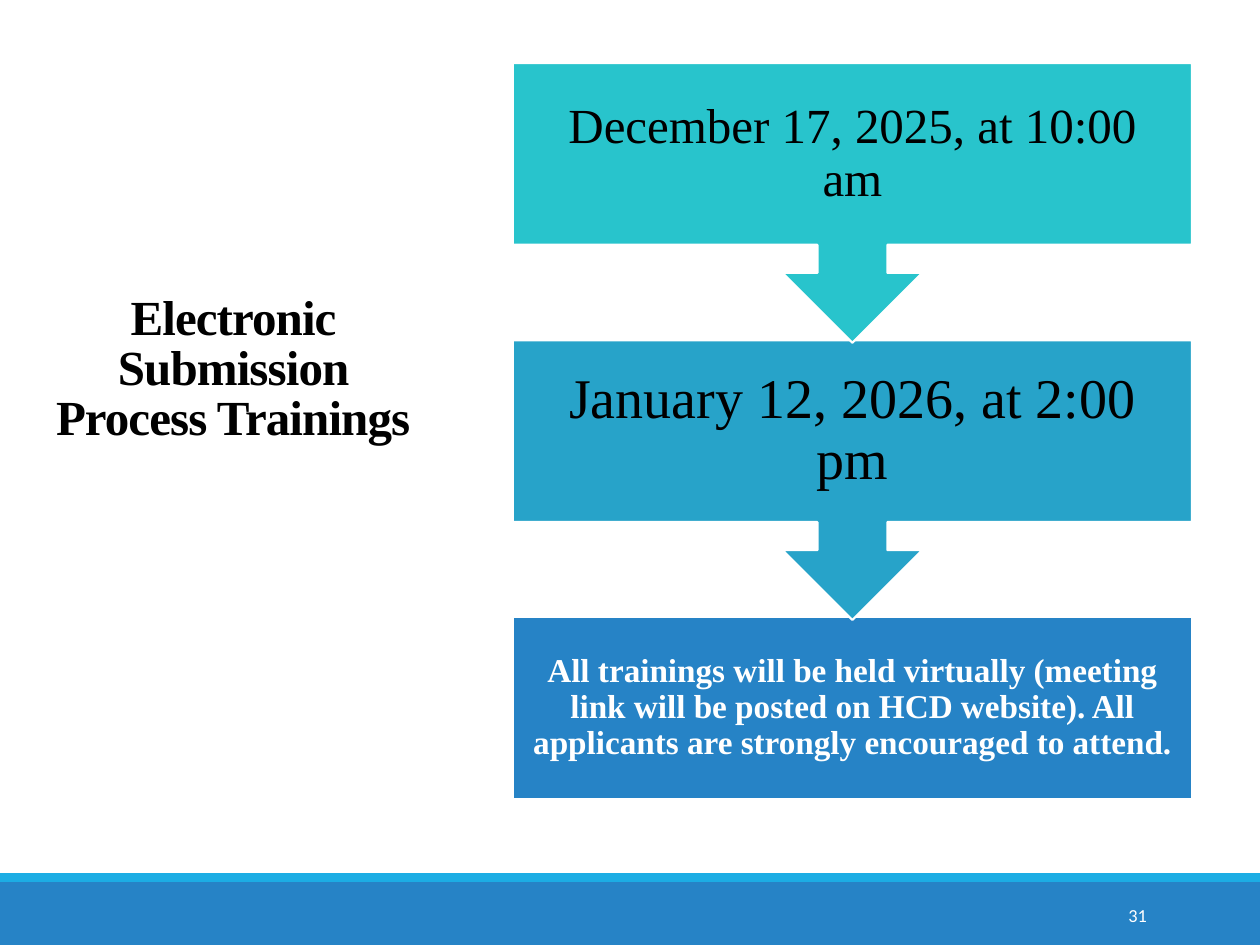
from dataclasses import dataclass

from pptx import Presentation
from pptx.dml.color import RGBColor
from pptx.enum.shapes import MSO_SHAPE as Shape
from pptx.enum.text import MSO_ANCHOR as Anchor, PP_ALIGN as Align
from pptx.util import Inches, Pt


@dataclass(frozen=True)
class Theme:
    serif: str = "Times New Roman"
    sans: str = "Calibri"
    ink: str = "000000"
    paper: str = "FFFFFF"
    blue: str = "2683C6"
    sky: str = "1CADE4"
    ocean: str = "27A3C9"
    teal: str = "28C4CC"
    heading: float = 28
    first_date: float = 28
    second_date: float = 32
    notice: float = 19
    number: float = 10.5
    outline: float = 1.25


THEME = Theme()
WIDTH, HEIGHT = 10, 7.5
STEP_LEFT, STEP_TOP, STEP_WIDTH = 4.07, 0.5, 5.39
STEP_HEIGHT, STEP_PITCH, CALLOUT_HEIGHT = 1.44, 2.2, 2.22


def add_block(slide, kind, box, fill, outline=None, rotation=0):
    block = slide.shapes.add_shape(kind, *map(Inches, box))
    block.shadow.inherit = False
    block.rotation = rotation
    block.fill.solid()
    block.fill.fore_color.rgb = RGBColor.from_string(fill)
    if outline:
        block.line.color.rgb = RGBColor.from_string(outline)
        block.line.width = Pt(THEME.outline)
    else:
        block.line.fill.background()


def add_text(slide, text, box, *, size, color, font=THEME.serif, bold=False,
             align=Align.CENTER, leading=1.0, tracking=0,
             insets=(0.1, 0.05, 0.1, 0.05)):
    frame = slide.shapes.add_textbox(*map(Inches, box)).text_frame
    frame.word_wrap = True
    frame.vertical_anchor = Anchor.MIDDLE
    (frame.margin_left, frame.margin_top,
     frame.margin_right, frame.margin_bottom) = map(Inches, insets)
    line = frame.paragraphs[0]
    line.alignment = align
    line.line_spacing = leading
    words = line.add_run()
    words.text = text
    words.font.name = font
    words.font.size = Pt(size)
    words.font.bold = bold
    words.font.color.rgb = RGBColor.from_string(color)
    if tracking:
        words.font._element.set("spc", str(int(tracking * 100)))


def add_step(slide, row, text, fill, inset, *, leads_on=True, **text_format):
    top = STEP_TOP + row * STEP_PITCH
    text_box = (STEP_LEFT, top, STEP_WIDTH, STEP_HEIGHT)
    if leads_on:
        callout_box = (STEP_LEFT, top, STEP_WIDTH, CALLOUT_HEIGHT)
        add_block(slide, Shape.UP_ARROW_CALLOUT, callout_box, fill,
                  THEME.paper, rotation=180)
    else:
        add_block(slide, Shape.RECTANGLE, text_box, fill, THEME.paper)
    add_text(slide, text, text_box, leading=0.9, insets=(inset,) * 4, **text_format)


def add_footer(slide, number):
    band, stripe = 0.5, 0.07
    band_top = HEIGHT - band
    add_block(slide, Shape.RECTANGLE, (0, band_top, WIDTH, band), THEME.blue)
    add_block(slide, Shape.RECTANGLE, (0, band_top - stripe, WIDTH, stripe), THEME.sky)
    add_text(slide, number, (8.12, 7.06, 1.08, 0.4), size=THEME.number,
             color=THEME.paper, font=THEME.sans, align=Align.RIGHT)


def main():
    deck = Presentation()
    deck.slide_width, deck.slide_height = Inches(WIDTH), Inches(HEIGHT)
    slide = deck.slides.add_slide(deck.slide_layouts[6])

    add_footer(slide, "31")
    add_text(slide, "Electronic Submission Process Trainings", (0.33, 0.27, 3.04, 6.31),
             size=THEME.heading, color=THEME.ink, bold=True, leading=0.85,
             tracking=-0.5, insets=(0.1, 0.05, 0.1, 1.02))

    add_step(slide, 2, "All trainings will be held virtually (meeting link will be posted "
             "on HCD website). All applicants are strongly encouraged to attend.",
             THEME.blue, 0.15, leads_on=False,
             size=THEME.notice, color=THEME.paper, bold=True)
    add_step(slide, 1, "January 12, 2026, at 2:00 pm", THEME.ocean, 0.25,
             size=THEME.second_date, color=THEME.ink)
    add_step(slide, 0, "December 17, 2025, at 10:00 am", THEME.teal, 0.22,
             size=THEME.first_date, color=THEME.ink)

    deck.save("out.pptx")


if __name__ == "__main__":
    main()
